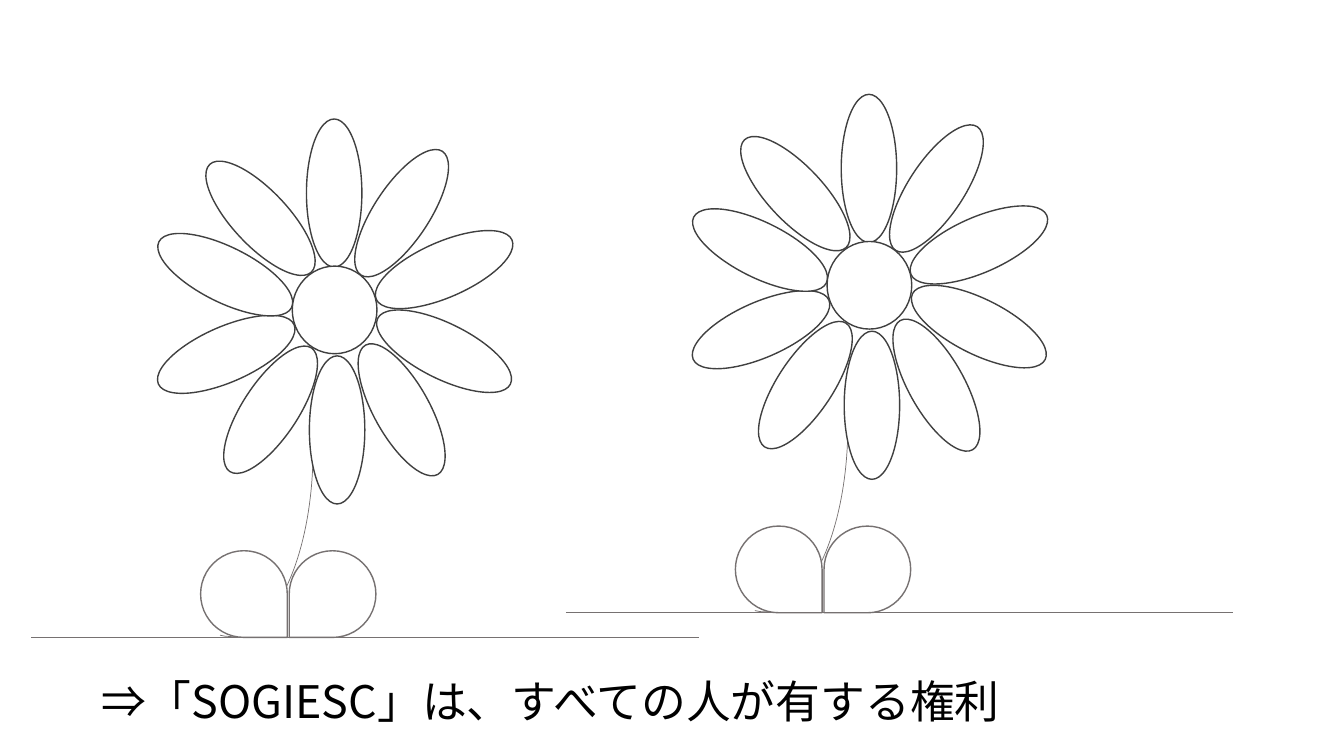
from lxml.etree import SubElement
from pptx import Presentation
from pptx.dml.color import RGBColor
from pptx.enum.shapes import MSO_CONNECTOR, MSO_SHAPE
from pptx.enum.text import MSO_AUTO_SIZE
from pptx.oxml.ns import qn
from pptx.util import Pt

FONT = "Noto Sans CJK JP"
BLACK, WHITE, PETAL_LINE, STEM_LINE = "000000", "FFFFFF", "404040", "767171"

# Left, top and rotation of each petal, clockwise from the top
PETALS = [
    (218.9, 85, 0), (267.1, 99.4, 33.4), (297.4, 139.7, 66.4),
    (297.4, 198, 116.4), (267.1, 239.8, 150.8), (221, 254.2, 0),
    (173.5, 239.8, 33.4), (141.8, 200.2, 66.4), (141.1, 143.3, 116.4),
    (166.3, 103, 136.7),
]
LEAVES = [(143.3, 393.4, 90), (206.6, 393.4, 180)]
FLOWER_OFFSETS = [(0, 0), (382, -17.6)]


def color(value):
    return RGBColor.from_string(value)


class SlideBuilder:
    def __init__(self, slide):
        self.slide = slide

    def outline(self, kind, left, top, width, height, line, weight=1,
                rotation=0, fill=WHITE):
        shape = self.slide.shapes.add_shape(
            kind, Pt(left), Pt(top), Pt(width), Pt(height))
        shape.shadow.inherit = False
        shape.rotation = rotation
        if fill:
            shape.fill.solid()
            shape.fill.fore_color.rgb = color(fill)
        else:
            shape.fill.background()
        shape.line.color.rgb = color(line)
        shape.line.width = Pt(weight)
        return shape

    def line(self, left, top, right, bottom, line, weight):
        connector = self.slide.shapes.add_connector(
            MSO_CONNECTOR.STRAIGHT, Pt(left), Pt(top), Pt(right), Pt(bottom))
        connector.line.color.rgb = color(line)
        connector.line.width = Pt(weight)
        SubElement(connector._element.spPr, qn("a:effectLst"))

    def text(self, left, top, width, height, words, size):
        box = self.slide.shapes.add_textbox(
            Pt(left), Pt(top), Pt(width), Pt(height))
        frame = box.text_frame
        frame.word_wrap = True
        frame.auto_size = MSO_AUTO_SIZE.SHAPE_TO_FIT_TEXT
        paragraph = frame.paragraphs[0]
        paragraph.text = words
        paragraph.font.size = Pt(size)
        paragraph.font.name = FONT
        paragraph.font.color.rgb = color(BLACK)
        # East Asian characters take their font from a:ea
        properties = paragraph.runs[0]._r.get_or_add_rPr()
        SubElement(properties, qn("a:ea"), typeface=FONT)

    def stem(self, x, y):
        arc = self.outline(MSO_SHAPE.ARC, x + 31, y + 262.1, 266.4, 118.8,
                           STEM_LINE, 0.5, 90, None)
        arc.adjustments[0] = 162
        arc.adjustments[1] = 1.819

    def flower(self, x, y):
        self.stem(x, y)
        # Petals and centre
        for left, top, rotation in PETALS:
            self.outline(MSO_SHAPE.OVAL, x + left, y + top, 39.6, 105.8,
                         PETAL_LINE, rotation=rotation)
        self.outline(MSO_SHAPE.OVAL, x + 208.8, y + 190.1, 60.5, 62.6, PETAL_LINE)
        # Ground and leaves
        self.line(x + 22.3, y + 455, x + 499, y + 455, STEM_LINE, 0.5)
        for left, top, rotation in LEAVES:
            self.outline(MSO_SHAPE.TEAR, x + left, y + top, 61.9, 61.9,
                         STEM_LINE, rotation=rotation)


def main():
    presentation = Presentation()
    presentation.slide_width, presentation.slide_height = Pt(960), Pt(540)
    slide = presentation.slides.add_slide(presentation.slide_layouts[6])
    builder = SlideBuilder(slide)

    # Two flowers, then the statement below them
    for x, y in FLOWER_OFFSETS:
        builder.flower(x, y)
    builder.text(65.5, 477.4, 754.6, 46.1,
                 "⇒「SOGIESC」は、すべての人が有する権利", 32)
    presentation.save("out.pptx")


if __name__ == "__main__":
    main()
